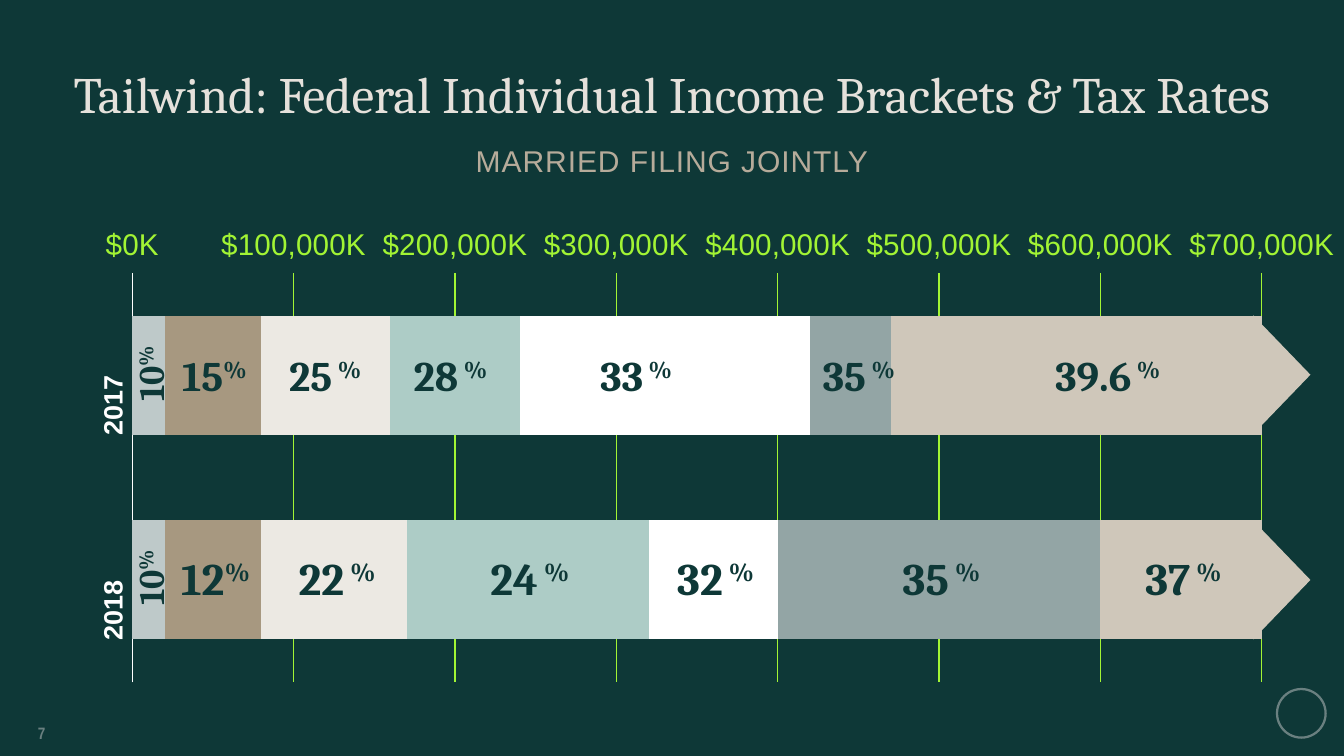
from lxml import etree
from pptx import Presentation
from pptx.chart.data import CategoryChartData
from pptx.dml.color import RGBColor
from pptx.enum.chart import XL_CHART_TYPE, XL_TICK_LABEL_POSITION, XL_TICK_MARK
from pptx.enum.shapes import MSO_SHAPE
from pptx.enum.text import MSO_ANCHOR, MSO_AUTO_SIZE, PP_ALIGN
from pptx.oxml import parse_xml
from pptx.oxml.ns import nsdecls, qn
from pptx.util import Inches, Pt

CENTER, RIGHT = PP_ALIGN.CENTER, PP_ALIGN.RIGHT
TOP, MIDDLE, BOTTOM = MSO_ANCHOR.TOP, MSO_ANCHOR.MIDDLE, MSO_ANCHOR.BOTTOM
NO_FIT = MSO_AUTO_SIZE.NONE
STACKED = XL_CHART_TYPE.BAR_STACKED
LOW, NO_TICK = XL_TICK_LABEL_POSITION.LOW, XL_TICK_MARK.NONE
TRIANGLE, OVAL = MSO_SHAPE.ISOSCELES_TRIANGLE, MSO_SHAPE.OVAL

COLORS = {
    "green": "0E3837", "cream": "E5E1DB", "taupe": "B6AB9A", "lime": "A2F434",
    "white": "FFFFFF", "muted": "6A8080", "arrow": "CFC7BA",
}
YEARS = ("2017", "2018")
BRACKETS = [
    ("BEC9C9", (20000, 20000)), ("A79880", (60000, 60000)),
    ("ECE9E3", (80000, 90000)), ("ADCCC6", (80000, 150000)),
    ("FFFFFF", (180000, 80000)), ("93A5A5", (50000, 200000)),
    ("CFC7BA", (230000, 100000)),
]
RATE_ROWS = [
    (2.82, 1.29, 28, [
        ("15", "%", 1.52, 0.93), ("25", " %", 2.45, 1.12), ("28", " %", 3.61, 1.12),
        ("33", " %", 5.33, 1.12), ("35", " %", 7.39, 1.12), ("39.6", " %", 9.48, 1.55),
    ]),
    (4.72, 1.25, 30, [
        ("12", "%", 1.52, 0.95), ("22", " %", 2.48, 1.28), ("24", " %", 4.29, 1.23),
        ("32", " %", 6.01, 1.23), ("35", " %", 8.1, 1.23), ("37", " %", 10.34, 1.23),
    ]),
]
LOWEST_RATES = [(0.74, 3.25, 1.29), (0.76, 5.14, 1.25)]
ARROW_TOPS = (2.92, 4.82)
ARROW_LEFT, ARROW_WIDTH, ARROW_HALF = 11.6, 0.53, 0.55


def rgb(name):
    return RGBColor.from_string(COLORS.get(name, name))


class TaxSlide:
    """Draws the elements of the tax bracket slide in one style."""

    def __init__(self, deck):
        self.page = deck.slides.add_slide(deck.slide_layouts[5])
        self.page.background.fill.solid()
        self.page.background.fill.fore_color.rgb = rgb("green")

    def set_font(self, font, size, color, name="Arial", bold=False):
        font.size, font.name, font.bold = Pt(size), name, bold
        font.color.rgb = rgb(color)

    def set_frame(self, frame, anchor, inset=True):
        frame.word_wrap = True
        frame.auto_size = NO_FIT
        frame.vertical_anchor = anchor
        if not inset:
            frame.margin_left = frame.margin_right = 0
            frame.margin_top = frame.margin_bottom = 0

    def title(self, text, left, top, width, height):
        box = self.page.shapes.title
        box.left, box.top = Inches(left), Inches(top)
        box.width, box.height = Inches(width), Inches(height)
        self.set_frame(box.text_frame, BOTTOM, inset=False)
        box.text_frame.text = text
        para = box.text_frame.paragraphs[0]
        para.alignment = CENTER
        self.set_font(para.font, 34, "cream", "Cambria")

    def text(self, text, left, top, width, height, size, color,
             name="Arial", bold=False, align=CENTER, anchor=MIDDLE, tracking=0):
        box = self.page.shapes.add_textbox(
            Inches(left), Inches(top), Inches(width), Inches(height))
        self.set_frame(box.text_frame, anchor, inset=False)
        para = box.text_frame.paragraphs[0]
        para.alignment = align
        span = para.add_run()
        span.text = text
        self.set_font(para.font, size, color, name, bold)
        if tracking:
            span.font._element.set("spc", str(tracking))
        return para

    def rate(self, number, sign, left, top, width, height, size, rotation=0):
        box = self.page.shapes.add_textbox(
            Inches(left), Inches(top), Inches(width), Inches(height))
        box.rotation = rotation
        self.set_frame(box.text_frame, MIDDLE)
        para = box.text_frame.paragraphs[0]
        para.alignment = CENTER
        para.space_before, para.space_after = Pt(18), Pt(12)
        self.set_font(para.font, size, "green", "Cambria", True)
        para.add_run().text = number
        span = para.add_run()
        span.text = sign
        span.font._element.set("baseline", "30000")

    def shape(self, kind, left, top, width, height):
        shape = self.page.shapes.add_shape(
            kind, Inches(left), Inches(top), Inches(width), Inches(height))
        shape.shadow.inherit = False
        return shape

    def arrow_half(self, top, flipped):
        half = self.shape(TRIANGLE, ARROW_LEFT, top, ARROW_WIDTH, ARROW_HALF)
        half.adjustments[0] = 0
        half.fill.solid()
        half.fill.fore_color.rgb = rgb("arrow")
        half.line.fill.background()
        if flipped:
            half._element.spPr.xfrm.set("flipV", "1")

    def ring(self, left, top, size):
        ring = self.shape(OVAL, left, top, size, size)
        ring.fill.background()
        ring.line.color.rgb = rgb("muted")
        ring.line.width = Pt(1.5)

    def chart(self, left, top, width, height):
        data = CategoryChartData()
        data.categories = YEARS
        for number, (_, values) in enumerate(BRACKETS, 1):
            data.add_series(f"Series {number}", values)
        chart = self.page.shapes.add_chart(
            STACKED, Inches(left), Inches(top), Inches(width), Inches(height), data).chart
        chart.has_title = chart.has_legend = False
        self.set_font(chart.font, 10, "white")
        plot = chart.plots[0]
        plot.gap_width, plot.overlap, plot.vary_by_categories = 72, 100, False
        for series, (color, _) in zip(plot.series, BRACKETS):
            series.format.fill.solid()
            series.format.fill.fore_color.rgb = rgb(color)

        years = chart.category_axis
        years.reverse_order = True
        years.has_major_gridlines = False
        years.format.line.color.rgb = rgb("white")
        years.format.line.width = Pt(0.75)
        self.set_font(years.tick_labels.font, 18, "white", bold=True)
        turned = years._element.find(qn("c:txPr")).find(qn("a:bodyPr"))
        turned.set("rot", "-5400000")
        turned.set("vert", "horz")

        income = chart.value_axis
        income.minimum_scale, income.maximum_scale, income.major_unit = 0, 700000, 100000
        income.tick_label_position = LOW
        income.tick_labels.number_format = '"$"#,##0"K"'
        income.tick_labels.number_format_is_linked = False
        income.format.line.fill.background()
        income.major_gridlines.format.line.color.rgb = rgb("lime")
        income.major_gridlines.format.line.width = Pt(0.75)
        self.set_font(income.tick_labels.font, 20, "lime")
        for axis in (years, income):
            axis.major_tick_mark = axis.minor_tick_mark = NO_TICK
        self.plot_layout(chart, x=0.044, y=0.115, w=0.912, h=0.828)

    def plot_layout(self, chart, **place):
        area = chart._chartSpace.chart.plotArea
        for old in area.findall(qn("c:layout")):
            area.remove(old)
        layout = parse_xml(f"<c:layout {nsdecls('c')}><c:manualLayout/></c:layout>")
        settings = {"layoutTarget": "inner", "xMode": "edge", "yMode": "edge", **place}
        for tag, value in settings.items():
            etree.SubElement(layout[0], qn(f"c:{tag}")).set("val", str(value))
        area.insert(0, layout)


def main():
    deck = Presentation()
    deck.slide_width, deck.slide_height = Inches(12.44), Inches(7)
    slide = TaxSlide(deck)
    slide.ring(11.82, 6.38, 0.45)
    slide.chart(0.72, 2, 11.63, 4.58)
    slide.title("Tailwind: Federal Individual Income Brackets & Tax Rates", 0.09, 0.4, 12.26, 0.75)
    slide.text("7", 0, 6.58, 0.42, 0.42, 11, "muted", "Arial Narrow", True, RIGHT)
    for top, height, size, rates in RATE_ROWS:
        for number, sign, left, width in rates:
            slide.rate(number, sign, left, top, width, height, size)
    for left, top, width in LOWEST_RATES:
        slide.rate("10", "%", left, top, width, 0.42, 24, rotation=270)
    subtitle = slide.text("MARRIED FILING JOINTLY", 0.72, 1.32, 11, 0.48, 20, "taupe",
                          anchor=TOP, tracking=60)
    subtitle.space_before, subtitle.space_after = Pt(12), Pt(2)
    for top in ARROW_TOPS:
        slide.arrow_half(top, flipped=False)
        slide.arrow_half(top + ARROW_HALF, flipped=True)
    deck.save("out.pptx")


if __name__ == "__main__":
    main()
